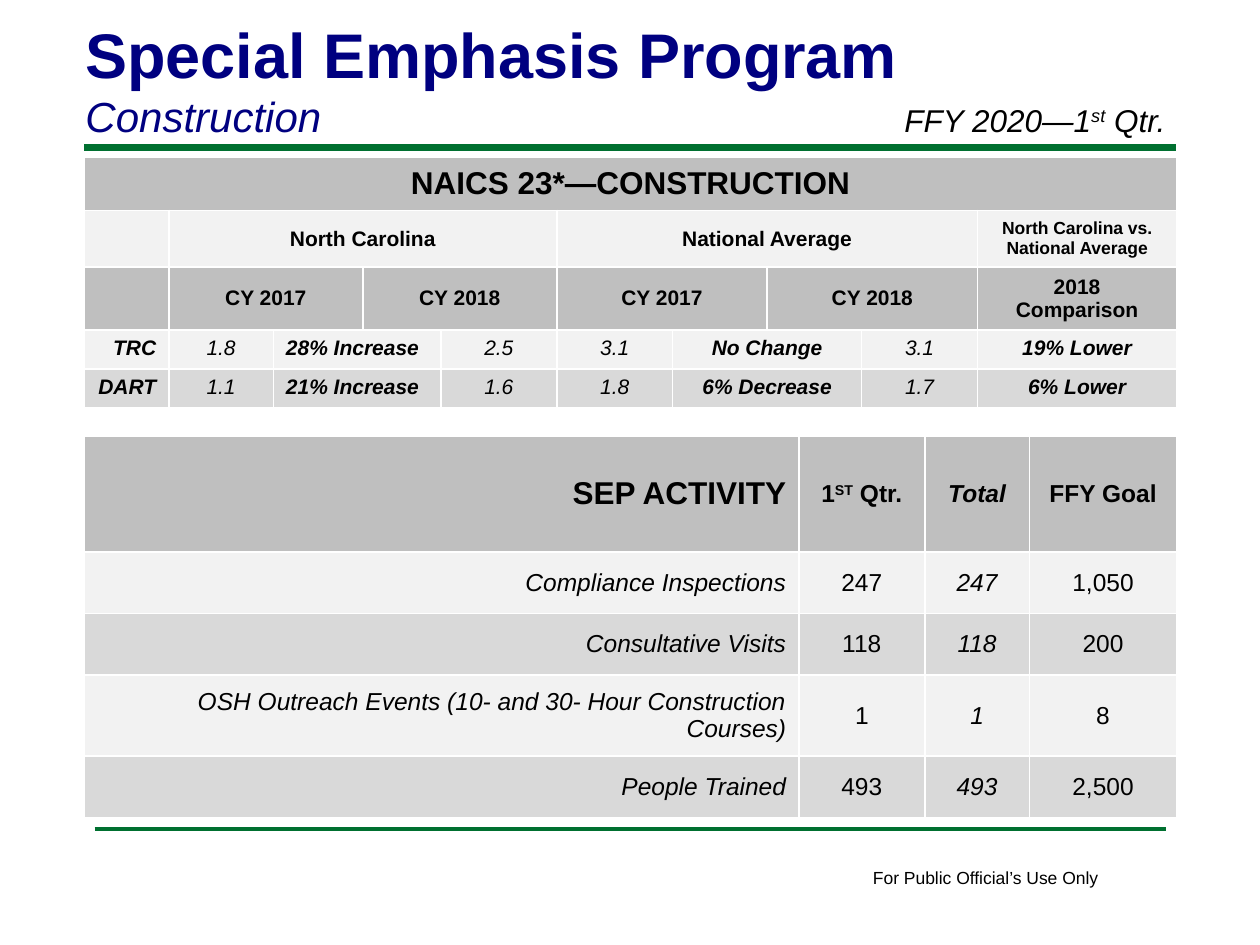
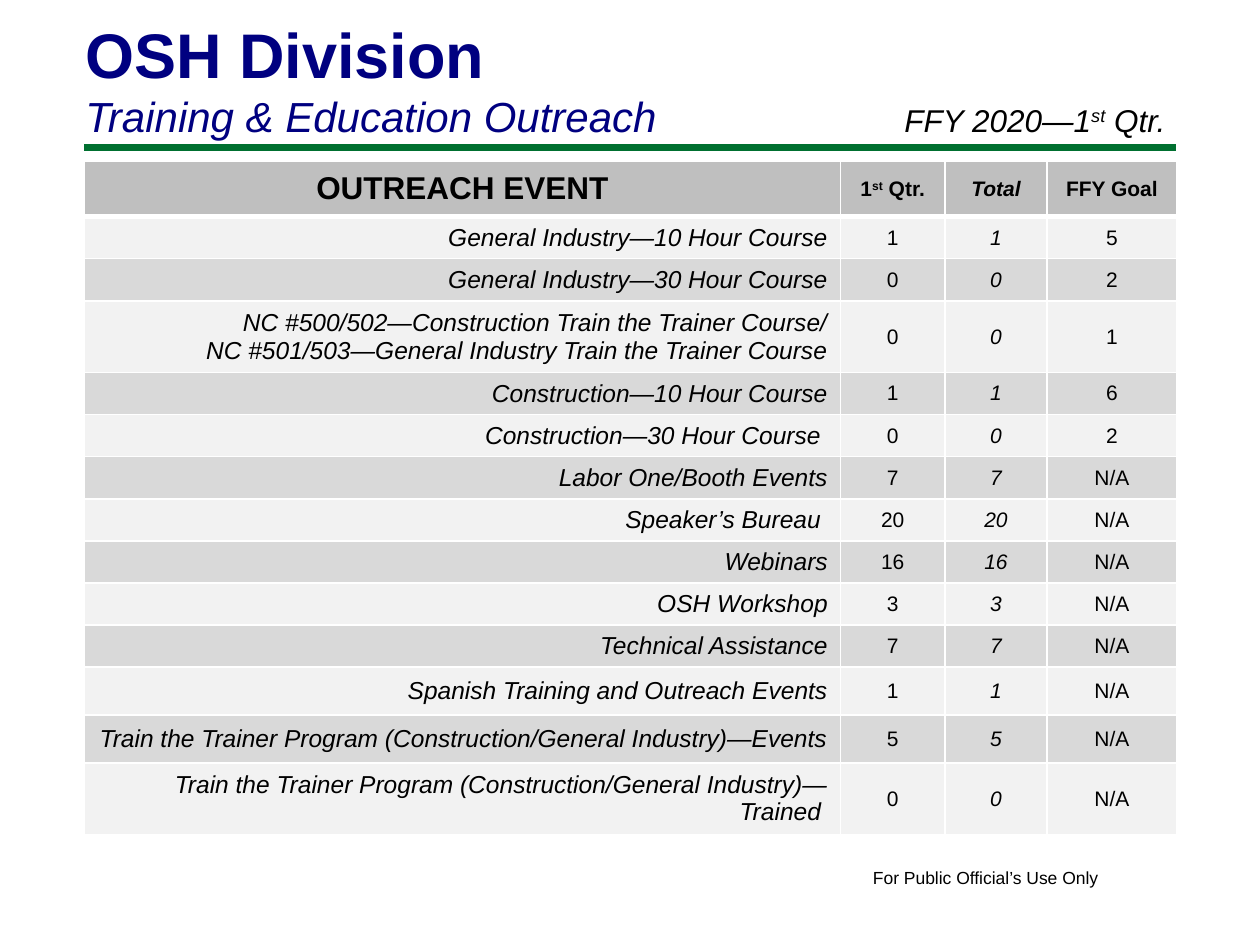
from itertools import cycle, islice
from lxml.etree import SubElement as Sub
from pptx import Presentation
from pptx.dml.color import RGBColor as Rgb
from pptx.enum.shapes import MSO_CONNECTOR as Conn
from pptx.enum.text import MSO_ANCHOR as Anchor, PP_ALIGN as Align
from pptx.oxml.ns import qn
from pptx.util import Inches, Pt

FONT = "Arial"
TINTS = {"navy": "000080", "green": "007030", "black": "000000", "white": "FFFFFF",
         "head": "BFBFBF", "light": "F2F2F2", "mid": "D9D9D9"}
LEFT = 0.67

RATE_COLS = [0.67, 0.83, 0.71, 0.62, 0.92, 0.92, 0.75, 0.75, 0.92, 1.58]
RATE_ROWS = [0.42, 0.45, 0.5, 0.31, 0.31]
RATE_TINTS = ["head", "light", "head", "light", "mid"]
RATE_HEADS = [
    [(10, "NAICS 23*—CONSTRUCTION")],
    [(1, ""), (4, "North Carolina"), (4, "National Average"),
     (1, "North Carolina vs. National Average")],
    [(1, ""), (2, "CY 2017"), (2, "CY 2018"), (2, "CY 2017"), (2, "CY 2018"),
     (1, "2018 Comparison")],
]
RATE_SPANS = [1, 1, 2, 1, 1, 2, 1, 1]
RATES = [
    ["TRC", "1.8", "28% Increase", "2.5", "3.1", "No Change", "3.1", "19% Lower"],
    ["DART", "1.1", "21% Increase", "1.6", "1.8", "6% Decrease", "1.7", "6% Lower"],
]

ACTS = [
    ("Compliance Inspections", "247", "1,050"),
    ("Consultative Visits", "118", "200"),
    ("OSH Outreach Events (10- and 30- Hour Construction Courses)", "1", "8"),
    ("People Trained", "493", "2,500"),
]
EVENTS = [
    ("General Industry—10 Hour Course", "1", "5"),
    ("General Industry—30 Hour Course", "0", "2"),
    ("NC #500/502—Construction Train the Trainer Course/\n"
     "NC #501/503—General Industry Train the Trainer Course", "0", "1"),
    ("Construction—10 Hour Course", "1", "6"),
    ("Construction—30 Hour Course ", "0", "2"),
    ("Labor One/Booth Events", "7", "N/A"),
    ("Speaker’s Bureau ", "20", "N/A"),
    ("Webinars", "16", "N/A"),
    ("OSH Workshop", "3", "N/A"),
    ("Technical Assistance", "7", "N/A"),
    ("Spanish Training and Outreach Events", "1", "N/A"),
    ("Train the Trainer Program (Construction/General Industry)—Events", "5", "N/A"),
    ("Train the Trainer Program (Construction/General Industry)—Trained ", "0", "N/A"),
]


def tint(name):
    """Return the named colour."""
    return Rgb.from_string(TINTS[name])


def style(para, size, bold=False, ital=False, hue="black", align=Align.LEFT):
    """Format a paragraph and raise the parts set between carets."""
    para.alignment = align
    parts = para.text.split("^")
    para.text = parts[0]
    for part in parts[1:]:
        para.add_run().text = part
    for num, run in enumerate(para.runs):
        font = run.font
        font.name, font.size, font.bold, font.italic = FONT, Pt(size), bold, ital
        font.color.rgb = tint(hue)
        if num % 2:
            run._r.get_or_add_rPr().set("baseline", "30000")


def label(slide, text, box, wrap=True, anchor=Anchor.TOP):
    """Add a text box and return its paragraphs."""
    frame = slide.shapes.add_textbox(*map(Inches, box)).text_frame
    frame.word_wrap, frame.vertical_anchor = wrap, anchor
    frame.text = text
    return frame.paragraphs


def rule(slide, left, top, right, width):
    """Draw a level green line."""
    line = slide.shapes.add_connector(Conn.STRAIGHT, *map(Inches, (left, top, right, top)))
    line.line.color.rgb, line.line.width = tint("green"), Pt(width)
    Sub(line._element.spPr, qn("a:effectLst"))


def page(deck, title, topic):
    """Add a slide with its title, period, rules and footer."""
    slide = deck.slides.add_slide(deck.slide_layouts[6])
    rule(slide, LEFT, 1.17, 9.33, 4)
    rule(slide, 0.75, 6.58, 9.25, 2)
    foot, = label(slide, "For Public Official’s Use Only", (6.83, 6.83, 2.01, 0.27), False)
    style(foot, 10)
    main, sub = label(slide, f"{title}\n{topic}", (0.58, 0.06, 8.25, 1.11),
                      anchor=Anchor.BOTTOM)
    style(main, 36, bold=True, hue="navy")
    style(sub, 24, ital=True, hue="navy")
    term, = label(slide, "FFY 2020—1^st^ Qtr.", (7.08, 0.75, 2.5, 0.4))
    style(term, 18, ital=True)
    return slide


def edge(cell, **wide):
    """Give a cell white borders, 1 point unless told otherwise."""
    props = cell._tc.get_or_add_tcPr()
    for side in "LRTB":
        line = Sub(props, qn(f"a:ln{side}"), w=str(Pt(wide.get(side, 1))))
        Sub(Sub(line, qn("a:solidFill")), qn("a:srgbClr"), val=TINTS["white"])


def grid(slide, top, cols, rows, tints, bar=1):
    """Add a table with tinted rows and a border of bar points under the head."""
    size = (LEFT, top, sum(cols), sum(rows))
    table = slide.shapes.add_table(len(rows), len(cols), *map(Inches, size)).table
    table.first_row = table.horz_banding = False
    for col, width in zip(table.columns, cols):
        col.width = Inches(width)
    for num, (row, height, hue) in enumerate(zip(table.rows, rows, tints)):
        row.height = Inches(height)
        for cell in row.cells:
            edge(cell, **{0: {"B": bar}, 1: {"T": bar}}.get(num, {}))
            cell.fill.solid()
            cell.fill.fore_color.rgb = tint(hue)
    return table


def put(cell, text, size, anchor=Anchor.MIDDLE, align=Align.CENTER, **look):
    """Write formatted text in a cell."""
    cell.vertical_anchor = anchor
    cell.text_frame.text = text
    for para in cell.text_frame.paragraphs:
        style(para, size, align=align, **look)


def spread(table, row, items):
    """Merge a row by its spans and yield each cell with its text."""
    col = 0
    for span, text in items:
        cell = table.cell(row, col)
        if span > 1:
            cell.merge(table.cell(row, col + span - 1))
        yield cell, text
        col += span


def rates(slide):
    """Add the table of injury rates."""
    table = grid(slide, 1.25, RATE_COLS, RATE_ROWS, RATE_TINTS)
    for row, items in enumerate(RATE_HEADS):
        for cell, text in spread(table, row, items):
            size = 18 if row == 0 else 10 if " vs. " in text else 12
            put(cell, text, size, bold=True)
    sides = {0: Align.RIGHT, 2: Align.LEFT}
    for row, texts in enumerate(RATES, len(RATE_HEADS)):
        cells = spread(table, row, zip(RATE_SPANS, texts))
        for num, (cell, text) in enumerate(cells):
            put(cell, text, 12, Anchor.TOP, sides.get(num, Align.CENTER),
                bold=num in (0, 2, 5, 7), ital=True)


def counts(slide, top, cols, rows, heads, data, size, side, bar=1):
    """Add a table of counts, totals and goals."""
    tints = ["head", *islice(cycle(["light", "mid"]), len(data))]
    table = grid(slide, top, cols, rows, tints, bar)
    for col, text in enumerate(heads):
        put(table.cell(0, col), text, size if col else 18,
            align=Align.CENTER if col else side, bold=True, ital=col == 2)
    for row, (name, count, goal) in enumerate(data, 1):
        put(table.cell(row, 0), name, 14, align=Align.RIGHT, ital=True)
        for col, text in enumerate((count, count, goal), 1):
            put(table.cell(row, col), text, size, ital=col == 2)


def main():
    """Build and save the deck."""
    deck = Presentation()
    deck.slide_width, deck.slide_height = Inches(10), Inches(7.5)

    slide = page(deck, "Special Emphasis Program", "Construction")
    counts(slide, 3.46, [5.67, 1, 0.83, 1.17], [0.92, 0.49, 0.49, 0.64, 0.49],
           ["SEP ACTIVITY", "1^ST^ Qtr.", "Total", "FFY Goal"], ACTS, 14, Align.RIGHT)
    rates(slide)

    slide = page(deck, "OSH Division", "Training & Education Outreach")
    high = [0.44, 0.33, 0.33, 0.57, *[0.33] * 7, 0.38, 0.38, 0.57]
    counts(slide, 1.28, [6, 0.83, 0.81, 1.03], high,
           ["OUTREACH EVENT", "1^st^ Qtr.", "Total", "FFY Goal"], EVENTS, 12,
           Align.CENTER, bar=3)

    deck.save("out.pptx")


if __name__ == "__main__":
    main()
